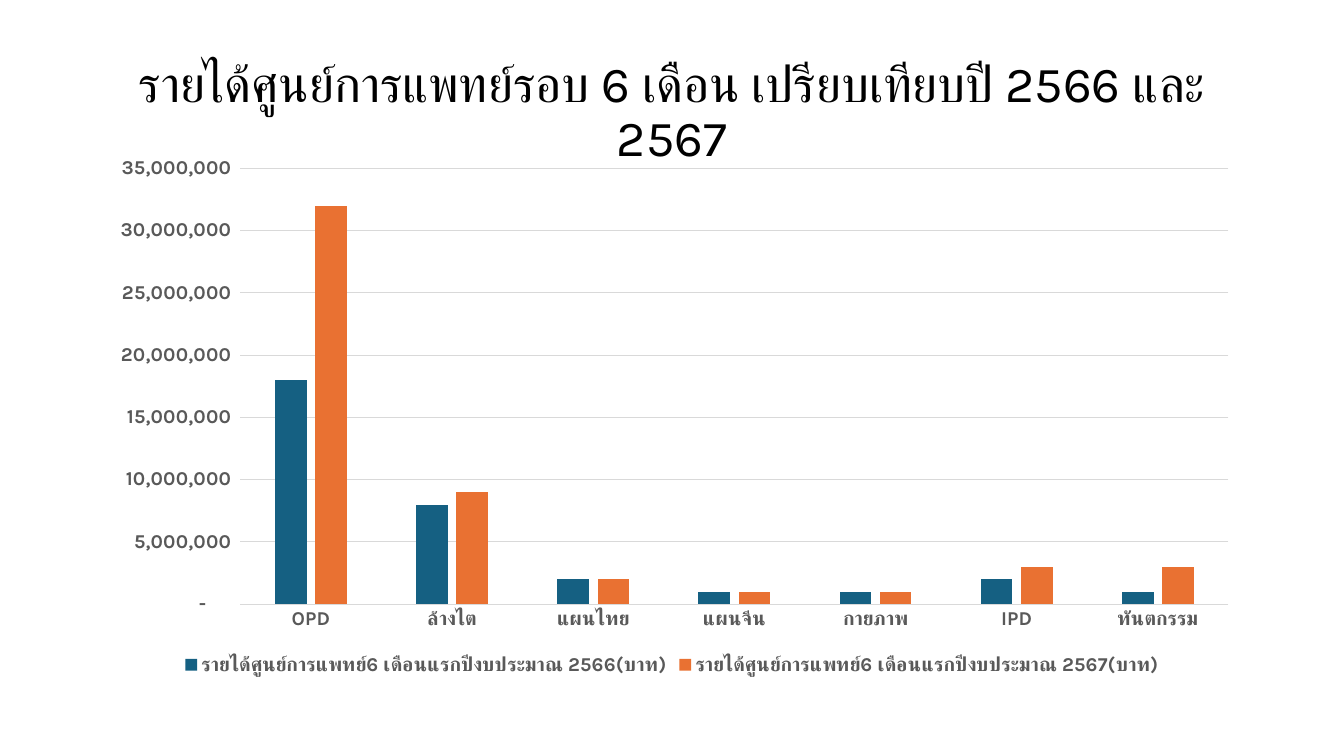
from lxml.etree import SubElement
from pptx import Presentation
from pptx.chart.data import CategoryChartData
from pptx.dml.color import RGBColor
from pptx.enum.chart import XL_CHART_TYPE, XL_LEGEND_POSITION, XL_TICK_MARK
from pptx.enum.text import MSO_ANCHOR, MSO_AUTO_SIZE, PP_ALIGN
from pptx.oxml.ns import qn
from pptx.util import Inches, Pt

HEADING = "รายได้ศูนย์การแพทย์รอบ 6 เดือน เปรียบเทียบปี 2566 และ 2567"
DEPARTMENTS = ["OPD", "ล้างไต", "แผนไทย", "แผนจีน", "กายภาพ", "IPD", "ทันตกรรม"]
REVENUE_MILLIONS = {
    "2566": ([18, 8, 2, 1, 1, 2, 1], "year_2566"),
    "2567": ([32, 9, 2, 1, 1, 3, 3], "year_2567"),
}
SERIES_LABEL = "รายได้ศูนย์การแพทย์6 เดือนแรกปีงบประมาณ {}(บาท)"
BAHT_FORMAT = '_(* #,##0_);_(* \\(#,##0\\);_(* "-"??_);_('
COLORS = {
    "heading": "000000",
    "label": "595959",
    "grid": "D9D9D9",
    "year_2566": "156082",
    "year_2567": "E97132",
}
TYPEFACE = "Karla"
HEADING_FONT = {"name": TYPEFACE, "size": Pt(36), "bold": False}
CHART_FONT = {"name": TYPEFACE, "size": Pt(10)}
LABEL_FONT = {"name": TYPEFACE, "size": Pt(14), "bold": True}
VALUE_SCALE = {"minimum_scale": 0, "maximum_scale": 35_000_000, "major_unit": 5_000_000}
NO_TICKS = {"major_tick_mark": XL_TICK_MARK.NONE, "minor_tick_mark": XL_TICK_MARK.NONE}

HEIGHT = 7.5
WIDTH = HEIGHT * 16 / 9
CONTENT_WIDTH = 11.5
MARGIN = (WIDTH - CONTENT_WIDTH) / 2
HEADING_TOP, HEADING_HEIGHT = 0.4, 1.45
CHART_TOP, CHART_HEIGHT = 1.45, 5.3


def apply(target, values):
    for attribute, value in values.items():
        setattr(target, attribute, value)


def style_font(font, values, color):
    apply(font, values)
    font.color.rgb = RGBColor.from_string(COLORS[color])


def add_thai_typeface(root):
    for latin in list(root.iter(qn("a:latin"))):
        thai = SubElement(latin.getparent(), qn("a:cs"), typeface=TYPEFACE)
        latin.addnext(thai)


def style_line(line):
    line.color.rgb = RGBColor.from_string(COLORS["grid"])
    line.width = Pt(0.75)


def add_heading(slide):
    heading = slide.shapes.title
    apply(heading, {
        "left": Inches(MARGIN), "top": Inches(HEADING_TOP),
        "width": Inches(CONTENT_WIDTH), "height": Inches(HEADING_HEIGHT),
    })
    apply(heading.text_frame, {
        "text": HEADING, "word_wrap": True,
        "vertical_anchor": MSO_ANCHOR.MIDDLE, "auto_size": MSO_AUTO_SIZE.NONE,
    })
    paragraph = heading.text_frame.paragraphs[0]
    apply(paragraph, {"alignment": PP_ALIGN.CENTER, "line_spacing": 0.9})
    style_font(paragraph.runs[0].font, HEADING_FONT, "heading")
    add_thai_typeface(paragraph.runs[0].font._element)


def add_revenue_chart(slide):
    revenue = CategoryChartData(number_format=BAHT_FORMAT)
    revenue.categories = DEPARTMENTS
    for year, (millions, _) in REVENUE_MILLIONS.items():
        baht = [amount * 1_000_000 for amount in millions]
        revenue.add_series(SERIES_LABEL.format(year), baht)
    chart = slide.shapes.add_chart(
        XL_CHART_TYPE.COLUMN_CLUSTERED, Inches(MARGIN), Inches(CHART_TOP),
        Inches(CONTENT_WIDTH), Inches(CHART_HEIGHT), revenue).chart
    apply(chart, {"has_title": False, "has_legend": True})
    style_font(chart.font, CHART_FONT, "heading")

    columns = chart.plots[0]
    apply(columns, {"gap_width": 219, "overlap": -27, "vary_by_categories": False})
    for series, (_, color) in zip(columns.series, REVENUE_MILLIONS.values()):
        series.format.fill.solid()
        series.format.fill.fore_color.rgb = RGBColor.from_string(COLORS[color])

    departments, baht_axis = chart.category_axis, chart.value_axis
    for axis in (departments, baht_axis):
        apply(axis, NO_TICKS)
        style_font(axis.tick_labels.font, LABEL_FONT, "label")
    style_line(departments.format.line)
    apply(baht_axis, VALUE_SCALE)
    baht_axis.format.line.fill.background()
    style_line(baht_axis.major_gridlines.format.line)
    apply(baht_axis.tick_labels, {
        "number_format": BAHT_FORMAT, "number_format_is_linked": False})

    apply(chart.legend, {
        "position": XL_LEGEND_POSITION.BOTTOM, "include_in_layout": False})
    style_font(chart.legend.font, LABEL_FONT, "label")
    add_thai_typeface(chart._chartSpace)


def main():
    deck = Presentation()
    apply(deck, {"slide_width": Inches(WIDTH), "slide_height": Inches(HEIGHT)})
    slide = deck.slides.add_slide(deck.slide_layouts.get_by_name("Title Only"))
    add_heading(slide)
    add_revenue_chart(slide)
    deck.save("out.pptx")


if __name__ == "__main__":
    main()
